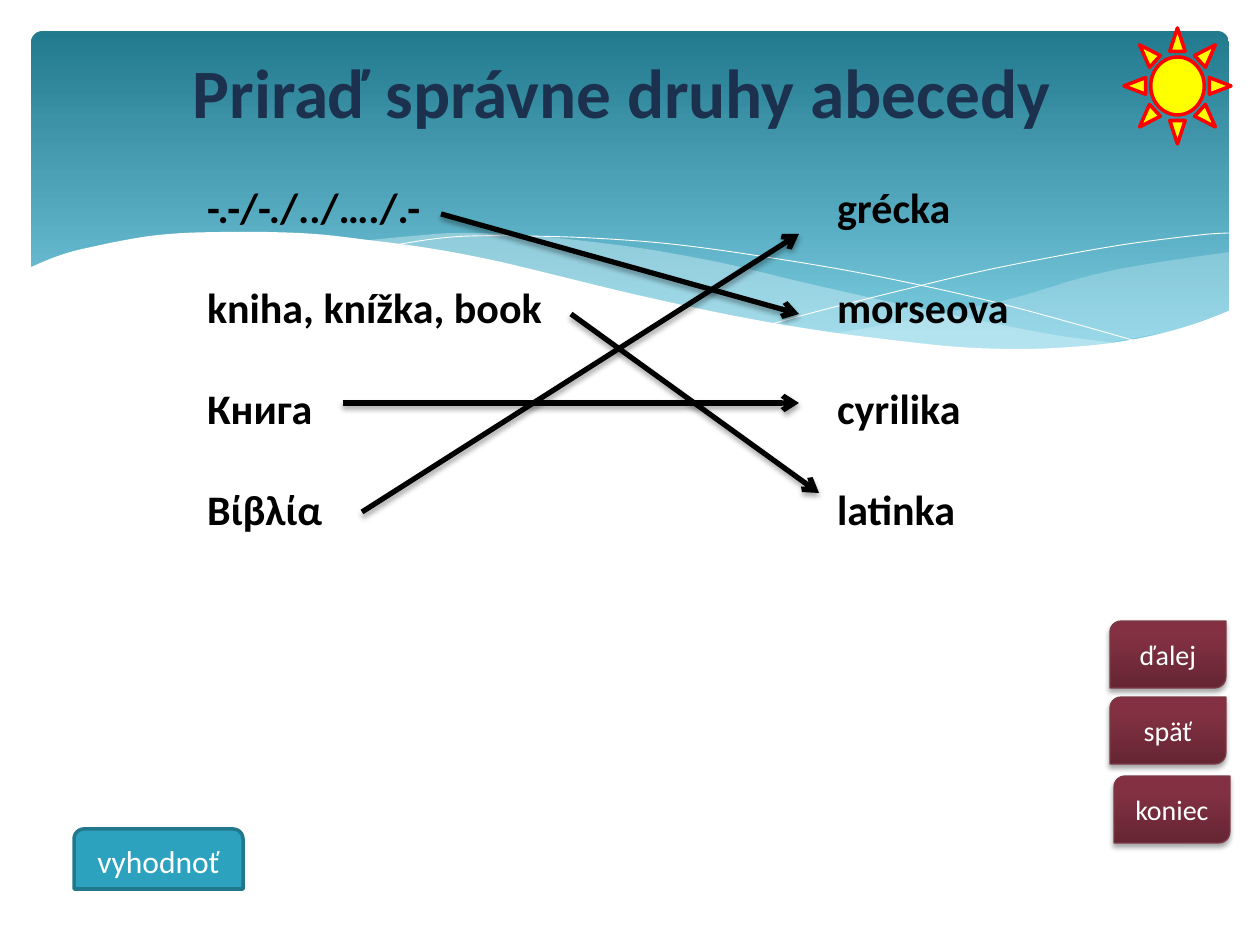
from lxml import etree
from pptx import Presentation
from pptx import util as u
from pptx.dml.color import RGBColor
from pptx.enum import shapes, text
from pptx.oxml import ns

SCALE = 914400 / 126
WIDTH, HEIGHT = 1260, 945
SHAPE = shapes.MSO_SHAPE
CENTER = text.PP_ALIGN.CENTER
LEFT = text.PP_ALIGN.LEFT
TOP = text.MSO_ANCHOR.TOP
MIDDLE = text.MSO_ANCHOR.MIDDLE

RIGHT_WAVE = [
    [(1229, 252), (1142, 265), (1085, 277), (1014, 298), (949, 312), (889, 324), (833, 334)],
    [(833, 334), (907, 344), (969, 349), (1012, 350), (1052, 349), (1099, 344),
     (1140, 337), (1178, 329), (1229, 311)],
]
MIDDLE_WAVE = [
    [(1125, 344), (1055, 335), (977, 320), (890, 302), (793, 280), (736, 266), (681, 255),
     (632, 247), (557, 238), (503, 234), (455, 233), (413, 236), (360, 241)],
    [(360, 241), (431, 251), (509, 266), (566, 280), (668, 302), (757, 321), (838, 335),
     (910, 344), (974, 349), (1031, 350), (1081, 348), (1125, 344)],
]
FALLING_LINE = [(389, 246), (433, 239), (471, 236), (524, 236), (591, 238), (671, 244),
                (766, 257), (876, 276), (1002, 304), (1143, 343)]
RISING_LINE = [(772, 324), (823, 310), (907, 289), (978, 272), (1053, 257), (1128, 244),
               (1200, 235), (1229, 233)]
WHITE_WAVE = [
    [(1231, 310), (1197, 323), (1159, 334), (1118, 342), (1071, 347), (1019, 349), (959, 347),
     (892, 340), (816, 330), (730, 315), (633, 294), (563, 277), (492, 260), (428, 248),
     (368, 240), (315, 234), (266, 232), (223, 232), (184, 233), (150, 236), (120, 241),
     (96, 246), (74, 251), (58, 256), (45, 261), (29, 268)],
    [(29, 415), (1231, 415)],
]


def px(length):
    return u.Emu(round(length * SCALE))


def color(hex_string):
    return RGBColor.from_string(hex_string)


def paint(shape, fill=None, line=None, width=1, opacity=100):
    shape.shadow.inherit = False
    if fill:
        shape.fill.solid()
        shape.fill.fore_color.rgb = color(fill)
        if opacity < 100:
            solid = shape.element.spPr.find(ns.qn("a:solidFill"))
            etree.SubElement(solid[0], ns.qn("a:alpha"), val=str(opacity * 1000))
    else:
        shape.fill.background()
    if line:
        shape.line.color.rgb = color(line)
        shape.line.width = u.Pt(width)
    else:
        shape.line.fill.background()


def paint_gradient(shape, stops, angle):
    shape.fill.gradient()
    shape.fill.gradient_angle = angle
    for stop, (position, hex_string) in zip(shape.fill.gradient_stops, stops):
        stop.position = position
        stop.color.rgb = color(hex_string)


def cast_shadow(shape):
    properties = shape.element.spPr
    for effects in properties.findall(ns.qn("a:effectLst")):
        properties.remove(effects)
    effects = etree.SubElement(properties, ns.qn("a:effectLst"))
    shadow = etree.SubElement(effects, ns.qn("a:outerShdw"), blurRad="39370", dist="22860",
                              dir="5400000", rotWithShape="0")
    tint = etree.SubElement(shadow, ns.qn("a:srgbClr"), val="000000")
    etree.SubElement(tint, ns.qn("a:alpha"), val="35000")


def write(shape, lines, size=16, hex_string="FFFFFF", bold=False, align=CENTER,
          anchor=MIDDLE, margins=(0, 0, 0, 0), gap=0, tab=None):
    frame = shape.text_frame
    frame.word_wrap = True
    frame.vertical_anchor = anchor
    frame.margin_left, frame.margin_top, frame.margin_right, frame.margin_bottom = map(px, margins)
    for index, line in enumerate(lines):
        paragraph = frame.add_paragraph() if index else frame.paragraphs[0]
        paragraph.alignment = align
        paragraph.space_before = u.Pt(gap if index else 0)
        if tab:
            stops = etree.SubElement(paragraph._p.get_or_add_pPr(), ns.qn("a:tabLst"))
            etree.SubElement(stops, ns.qn("a:tab"), pos=str(px(tab)), algn="l")
        run = paragraph.add_run()
        run.text = line
        run.font.name = "Calibri"
        run.font.size = u.Pt(size)
        run.font.bold = bold
        run.font.color.rgb = color(hex_string)


def add_box(slide, kind, left, top, width, height):
    return slide.shapes.add_shape(kind, px(left), px(top), px(width), px(height))


def smooth(points, steps=6):
    padded = [points[0], *points, points[-1]]
    curve = [points[0]]
    for a, b, c, d in zip(padded, padded[1:], padded[2:], padded[3:]):
        for step in range(1, steps + 1):
            t = step / steps
            curve.append(tuple(
                q + t * (r - p + t * (2 * p - 5 * q + 4 * r - s + t * (3 * (q - r) + s - p))) / 2
                for p, q, r, s in zip(a, b, c, d)))
    return curve


def add_wave(slide, box, edges, close=True, **style):
    left, top = box[:2]
    points = [(px(left + x), px(top + y))
              for edge in edges
              for x, y in (smooth(edge) if len(edge) > 2 else edge)]
    builder = slide.shapes.build_freeform(*points[0], scale=1.0)
    builder.add_line_segments(points[1:], close=close)
    paint(builder.convert_to_shape(), **style)


def add_header(slide, box):
    left, top, width, _ = box
    panel = add_box(slide, SHAPE.ROUNDED_RECTANGLE, left + 31, top + 31, width - 62, 340)
    panel.adjustments[0] = 0.034
    paint(panel)
    paint_gradient(panel, [(0, "227A8F"), (0.9, "7ACBE0")], 270)
    add_wave(slide, box, RIGHT_WAVE, fill="DEF5FA", opacity=29)
    add_wave(slide, box, MIDDLE_WAVE, fill="DEF5FA", opacity=40)
    for curve in (FALLING_LINE, RISING_LINE):
        add_wave(slide, box, [curve], close=False, line="FFFFFF", width=0.5)
    add_wave(slide, box, WHITE_WAVE, fill="FFFFFF")


def add_navigation(slide, box):
    left, top, width, _ = box
    for label, x, y in (("koniec", 4, 155), ("späť", 0, 76), ("ďalej", 0, 0)):
        button = add_box(slide, SHAPE.ROUND_2_DIAG_RECTANGLE, left + x, top + y, width - 4, 67)
        paint(button, line="7C3947", width=0.75)
        paint_gradient(button, [(0, "652533"), (0.8, "833142")], 90)
        cast_shadow(button)
        write(button, [label])


def add_sun(slide, box):
    paint(add_box(slide, SHAPE.SUN, *box), fill="FFFF00", line="FF0000", width=2)


def add_title(slide, box):
    title = slide.shapes.add_textbox(*map(px, box))
    write(title, ["Priraď správne druhy abecedy"], size=39.6, hex_string="1C314E",
          bold=True, anchor=TOP, margins=(0, 2, 16, 0))


def add_check_button(slide, box):
    button = add_box(slide, SHAPE.ROUND_2_SAME_RECTANGLE, *box)
    paint(button, fill="2DA2BF", line="21788D", width=2)
    write(button, ["vyhodnoť"], size=18)


def add_matching(slide, box):
    left, top = box[:2]
    pairs = [("-.-/-./../…./.-", "grécka"), ("kniha, knížka, book", "morseova"),
             ("Книга", "cyrilika"), ("Βίβλία", "latinka")]
    words = slide.shapes.add_textbox(*map(px, box))
    write(words, ["\t".join(pair) for pair in pairs], size=24, hex_string="000000", bold=True,
          align=LEFT, anchor=TOP, margins=(13, 6, 13, 6), gap=28.8, tab=630)
    arrows = [(247, 39, 605, 139), (377, 139, 625, 318), (149, 228, 605, 228), (168, 337, 605, 59)]
    for x1, y1, x2, y2 in arrows:
        arrow = slide.shapes.add_connector(shapes.MSO_CONNECTOR.STRAIGHT, px(left + x1),
                                           px(top + y1), px(left + x2), px(top + y2))
        arrow.line.color.rgb = color("000000")
        arrow.line.width = u.Pt(3)
        etree.SubElement(arrow.element.spPr.find(ns.qn("a:ln")), ns.qn("a:tailEnd"), type="arrow")
        cast_shadow(arrow)


def main():
    presentation = Presentation()
    presentation.slide_width, presentation.slide_height = px(WIDTH), px(HEIGHT)
    slide = presentation.slides.add_slide(presentation.slide_layouts[6])
    add_header(slide, (0, 0, WIDTH, HEIGHT))
    add_navigation(slide, (1110, 621, 120, 222))
    add_sun(slide, (1124, 28, 107, 116))
    add_title(slide, (63, 47, 1134, 172))
    add_check_button(slide, (74, 829, 169, 60))
    add_matching(slide, (194, 175, 840, 369))
    presentation.save("out.pptx")


if __name__ == "__main__":
    main()
